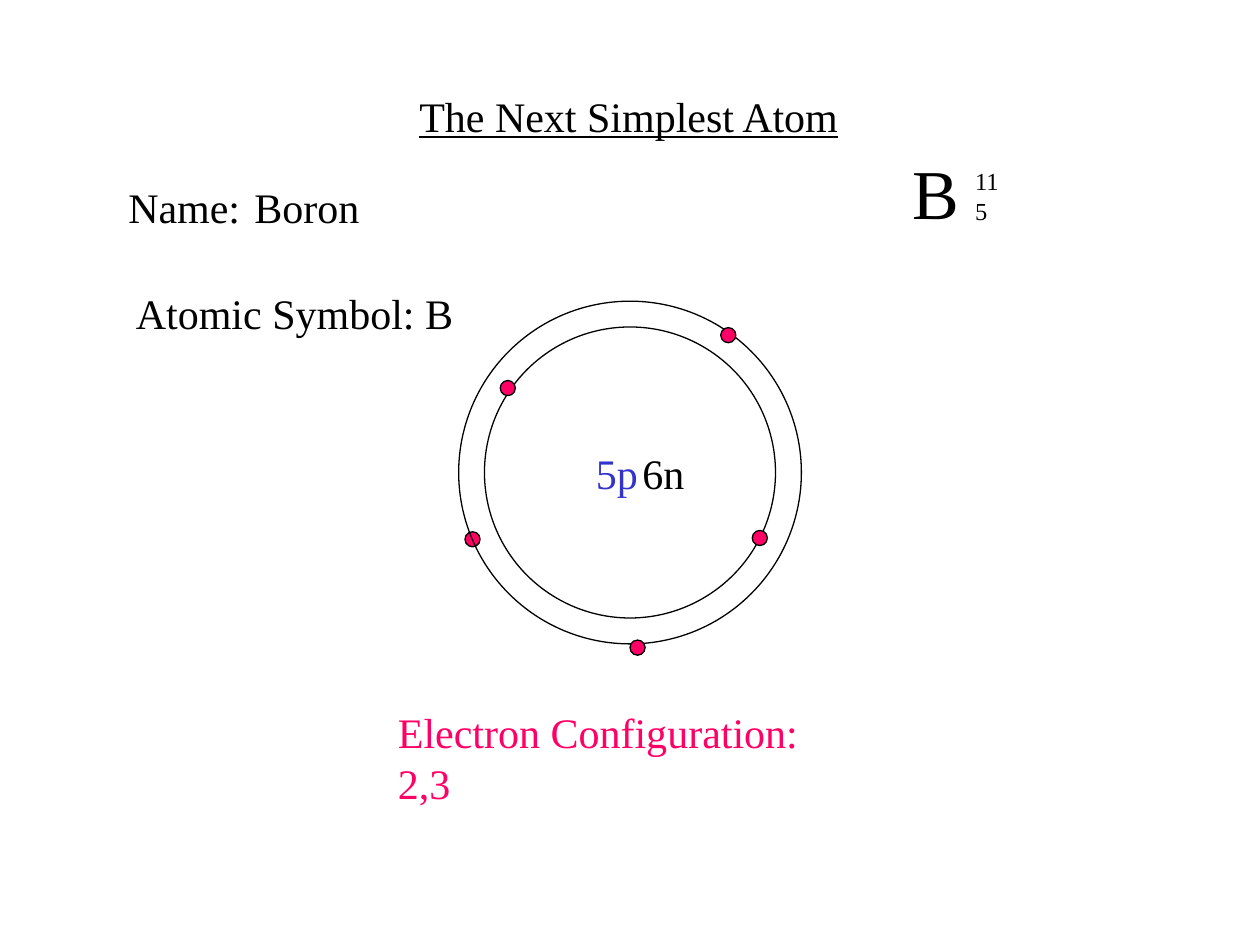
from dataclasses import dataclass

from pptx import Presentation
from pptx.dml.color import RGBColor
from pptx.enum.shapes import MSO_SHAPE
from pptx.enum.text import MSO_AUTO_SIZE
from pptx.util import Inches, Pt


@dataclass(frozen=True)
class Theme:
    font: str = "Times New Roman"
    ink: RGBColor = RGBColor(0x00, 0x00, 0x00)
    electron: RGBColor = RGBColor(0xFF, 0x00, 0x66)
    proton: RGBColor = RGBColor(0x33, 0x33, 0xCC)
    symbol: int = 40
    body: int = 24
    index: int = 14


theme = Theme()


def add_text(parent, text, left, top, width, height, size=theme.body,
             color=theme.ink, underline=None, wrap=False):
    box = parent.shapes.add_textbox(Inches(left), Inches(top), Inches(width), Inches(height))
    frame = box.text_frame
    frame.word_wrap = wrap
    frame.auto_size = MSO_AUTO_SIZE.SHAPE_TO_FIT_TEXT
    run = frame.paragraphs[0].add_run()
    run.text = text
    run.font.name = theme.font
    run.font.size = Pt(size)
    run.font.color.rgb = color
    run.font.underline = underline


def add_circle(parent, center_x, center_y, diameter, fill=None):
    circle = parent.shapes.add_shape(
        MSO_SHAPE.OVAL, Inches(center_x - diameter / 2), Inches(center_y - diameter / 2),
        Inches(diameter), Inches(diameter))
    circle.shadow.inherit = False
    circle.line.color.rgb = theme.ink
    circle.line.width = Pt(0.75)
    if fill is None:
        circle.fill.background()
    else:
        circle.fill.solid()
        circle.fill.fore_color.rgb = fill


prs = Presentation()
prs.slide_width = Inches(10)
prs.slide_height = Inches(7.5)
slide = prs.slides.add_slide(prs.slide_layouts[6])

add_text(slide, "The Next Simplest Atom", 3.23, 0.67, 3.54, 0.5, underline=True)

nuclide = slide.shapes.add_group_shape()
add_text(nuclide, "B", 7.14, 1.14, 0.5, 0.77, size=theme.symbol, wrap=True)
add_text(nuclide, "11", 7.64, 1.27, 0.41, 0.33, size=theme.index, wrap=True)
add_text(nuclide, "5", 7.64, 1.51, 0.3, 0.33, size=theme.index)

add_text(slide, "Name: \tBoron", 0.92, 1.39, 2.03, 0.5)
add_text(slide, "Atomic Symbol: B", 0.98, 2.23, 2.72, 0.5)
add_text(slide, "Electron Configuration: 2,3", 3.06, 5.56, 3.87, 0.5, color=theme.electron)

nucleus = slide.shapes.add_group_shape()
add_text(nucleus, "5p", 4.63, 3.5, 0.75, 0.5, color=theme.proton, wrap=True)
add_text(nucleus, "6n", 5, 3.5, 0.53, 0.5)

shells = slide.shapes.add_group_shape()
atom_x, atom_y = 5, 3.75
inner_shell, outer_shell, electron_size = 2.31, 2.72, 0.12
inner_electrons = [(4.03, 3.08), (6.03, 4.27)]
outer_electrons = [(5.78, 2.66), (5.06, 5.14)]

add_circle(shells, 3.75, 4.28, electron_size, fill=theme.electron)
for shell, electrons in [(inner_shell, inner_electrons), (outer_shell, outer_electrons)]:
    add_circle(shells, atom_x, atom_y, shell)
    for x, y in electrons:
        add_circle(shells, x, y, electron_size, fill=theme.electron)

prs.save("out.pptx")
